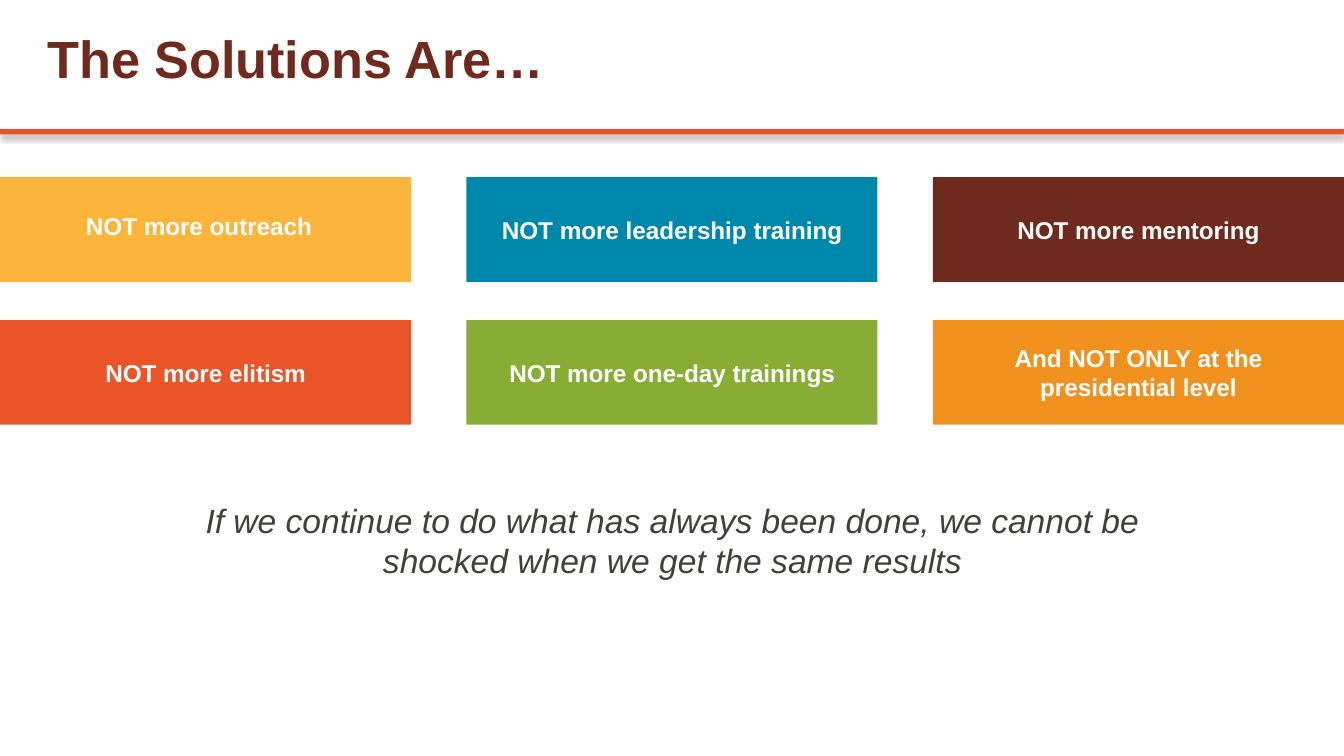
from lxml import etree
from pptx import Presentation
from pptx.dml.color import RGBColor
from pptx.enum.shapes import MSO_SHAPE
from pptx.enum.text import MSO_ANCHOR, MSO_AUTO_SIZE, PP_ALIGN
from pptx.oxml.ns import qn
from pptx.util import Cm, Pt

BROWN = RGBColor(0x6E, 0x2A, 0x1D)
RED = RGBColor(0xE9, 0x54, 0x29)
YELLOW = RGBColor(0xFB, 0xB5, 0x3B)
BLUE = RGBColor(0x00, 0x88, 0xAC)
GREEN = RGBColor(0x87, 0xAD, 0x34)
ORANGE = RGBColor(0xF0, 0x91, 0x1E)
GREY = RGBColor(0x3E, 0x41, 0x3C)
WHITE = RGBColor(0xFF, 0xFF, 0xFF)

SLIDE_WIDTH = 25.4
BAND_WIDTH, BAND_HEIGHT = 7.77, 1.98
COLUMN_STEP = (SLIDE_WIDTH - BAND_WIDTH) / 2
ROW_STEP = 2.7
FIRST_ROW_TOP = 3.35


def add_rectangle(left, top, width, height, color):
    shape = slide.shapes.add_shape(
        MSO_SHAPE.RECTANGLE, Cm(left), Cm(top), Cm(width), Cm(height))
    shape.fill.solid()
    shape.fill.fore_color.rgb = color
    shape.line.fill.background()
    shape.shadow.inherit = False
    return shape


def write(frame, text, size, color, align, bold=False, italic=False):
    """Fill the first paragraph of a text frame with one formatted run."""
    frame.word_wrap = True
    para = frame.paragraphs[0]
    para.alignment = align
    span = para.add_run()
    span.text = text
    span.font.name = "Arial"
    span.font.size = Pt(size)
    span.font.bold = bold
    span.font.italic = italic
    span.font.color.rgb = color


deck = Presentation()
deck.slide_width, deck.slide_height = Cm(SLIDE_WIDTH), Cm(14.29)
slide = deck.slides.add_slide(deck.slide_layouts[5])

# Title and the rule below it
title = slide.shapes.title
title.left, title.top, title.width, title.height = Cm(0.64), Cm(0.18), Cm(17.78), Cm(1.8)
title.text_frame.vertical_anchor = MSO_ANCHOR.MIDDLE
write(title.text_frame, "The Solutions Are…", 28, BROWN, PP_ALIGN.LEFT, bold=True)

rule = add_rectangle(0, 2.44, SLIDE_WIDTH, 0.1, RED)
effects = rule._element.spPr.find(qn("a:effectLst"))
shadow = etree.SubElement(
    effects, qn("a:outerShdw"), blurRad=str(Pt(3.1)), dist=str(Pt(1.8)),
    dir="5400000", rotWithShape="0")
shadow_color = etree.SubElement(shadow, qn("a:srgbClr"), val="000000")
etree.SubElement(shadow_color, qn("a:alpha"), val="35000")

# Bands: text, colour and margins (left, right, bottom)
bands = [
    [("NOT more outreach", YELLOW, (0, 0.25, 0.13)),
     ("NOT more leadership training", BLUE, (0, 0, 0)),
     ("NOT more mentoring", BROWN, (0, 0, 0))],
    [("NOT more elitism", RED, (0, 0, 0)),
     ("NOT more one-day trainings", GREEN, (0, 0, 0)),
     ("And NOT ONLY at the presidential level", ORANGE, (1.12, 1.12, 0))],
]
for row, row_bands in enumerate(bands):
    for column, (text, color, margins) in enumerate(row_bands):
        band = add_rectangle(column * COLUMN_STEP, FIRST_ROW_TOP + row * ROW_STEP,
                             BAND_WIDTH, BAND_HEIGHT, color)
        frame = band.text_frame
        frame.margin_top = 0
        frame.margin_left, frame.margin_right, frame.margin_bottom = map(Cm, margins)
        frame.vertical_anchor = MSO_ANCHOR.MIDDLE
        write(frame, text, 13, WHITE, PP_ALIGN.CENTER, bold=True)

# Closing statement
closing = slide.shapes.add_textbox(Cm(2.74), Cm(9.32), Cm(19.94), Cm(1.8))
closing.text_frame.auto_size = MSO_AUTO_SIZE.SHAPE_TO_FIT_TEXT
write(closing.text_frame,
      "If we continue to do what has always been done, we cannot be "
      "shocked when we get the same results",
      18, GREY, PP_ALIGN.CENTER, italic=True)

deck.save("out.pptx")
